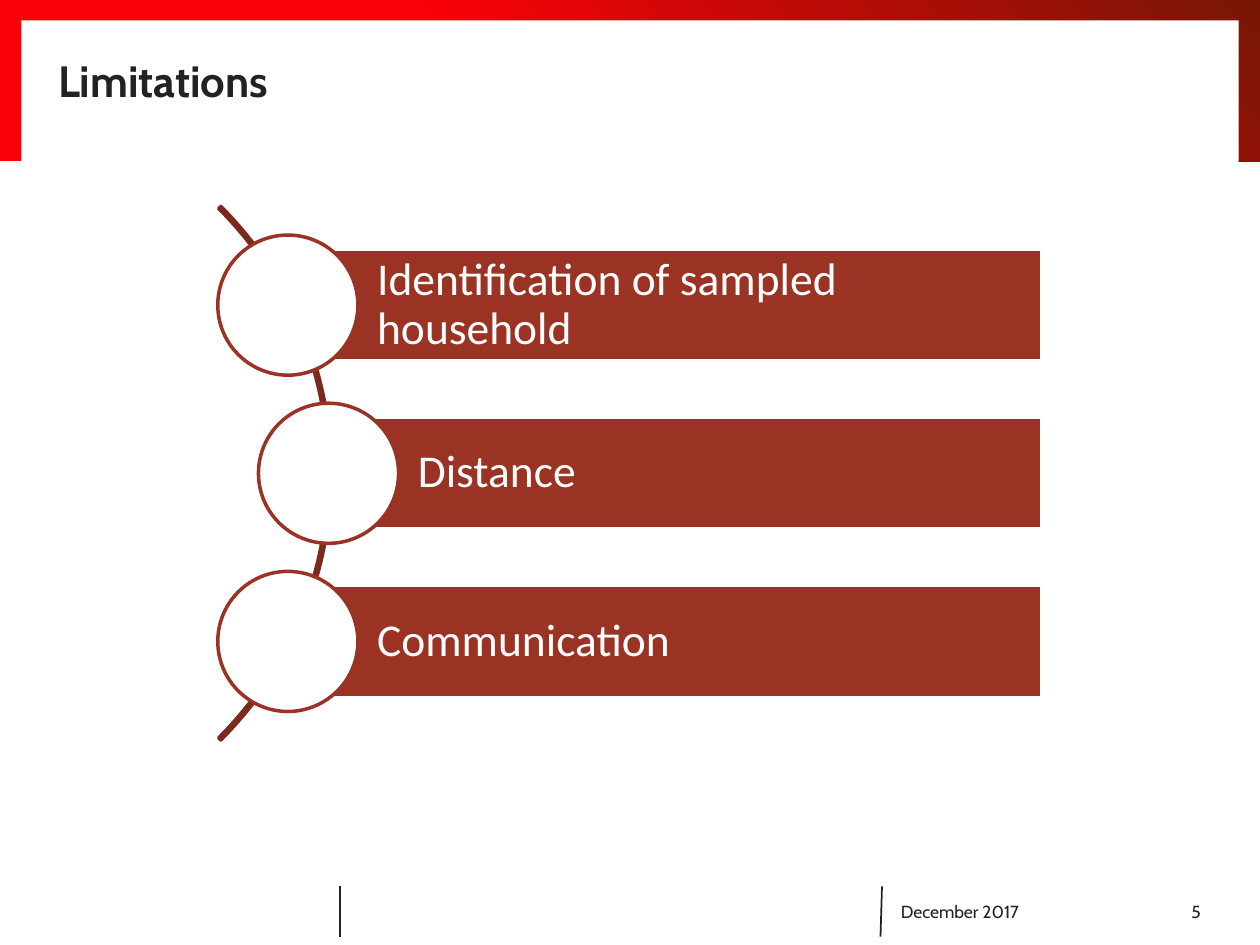
from dataclasses import dataclass
from typing import NamedTuple

from lxml.etree import SubElement
from pptx import Presentation
from pptx.dml.color import RGBColor
from pptx.enum.shapes import MSO_CONNECTOR, MSO_SHAPE
from pptx.enum.text import MSO_ANCHOR, MSO_AUTO_SIZE, PP_ALIGN
from pptx.oxml.ns import qn
from pptx.util import Cm, Pt


@dataclass(frozen=True)
class Theme:
    """Colours, fonts and type sizes of the slide."""
    ink: RGBColor = RGBColor.from_string("222221")
    white: RGBColor = RGBColor.from_string("FFFFFF")
    bright_red: RGBColor = RGBColor.from_string("FA0007")
    dark_red: RGBColor = RGBColor.from_string("761706")
    brick: RGBColor = RGBColor.from_string("9A3324")
    arc: RGBColor = RGBColor.from_string("7B291D")
    heading_font: str = "Cabin"
    item_font: str = "Calibri"
    title_size: Pt = Pt(25)
    item_size: Pt = Pt(26)
    footer_size: Pt = Pt(10)
    outline: Pt = Pt(2)
    divider: Pt = Pt(1)


class Box(NamedTuple):
    """A region of the slide in centimetres."""
    left: float
    top: float
    width: float
    height: float

    def lengths(self):
        """Return the four sides as slide lengths."""
        return [Cm(side) for side in self]


THEME = Theme()


def add_flat_shape(shapes, kind, box, fill=None, line=None):
    """Add a preset shape without shadow, with optional fill and outline."""
    shape = shapes.add_shape(kind, *box.lengths())
    shape.shadow.inherit = False
    if fill is None:
        shape.fill.background()
    else:
        shape.fill.solid()
        shape.fill.fore_color.rgb = fill
    if line is None:
        shape.line.fill.background()
    else:
        shape.line.color.rgb = line
        shape.line.width = THEME.outline
    return shape


def write(frame, text, font, size, color, align=PP_ALIGN.LEFT, bold=False):
    """Write one vertically centred, wrapping paragraph and return it."""
    frame.word_wrap = True
    frame.auto_size = MSO_AUTO_SIZE.NONE
    frame.vertical_anchor = MSO_ANCHOR.MIDDLE
    frame.text = text
    paragraph = frame.paragraphs[0]
    paragraph.alignment = align
    paragraph.font.name = font
    paragraph.font.size = size
    paragraph.font.bold = bold
    paragraph.font.color.rgb = color
    return paragraph


def set_margins(frame, left, other):
    """Set the left margin and the three other margins of a text frame."""
    frame.margin_left = Cm(left)
    frame.margin_top = frame.margin_right = frame.margin_bottom = Cm(other)


def add_header_frame(slide, box):
    """Draw the gradient band and the white panel that opens it downwards."""
    band = add_flat_shape(slide.shapes, MSO_SHAPE.RECTANGLE, box, THEME.bright_red)
    band.fill.gradient()
    band.fill.gradient_angle = 45
    stops = ((0.4, THEME.bright_red), (1, THEME.dark_red))
    for stop, (position, color) in zip(band.fill.gradient_stops, stops):
        stop.position = position
        stop.color.rgb = color
    border = 0.43
    panel = Box(box.left + border, box.top + 0.41, box.width - 2 * border, 3)
    add_flat_shape(slide.shapes, MSO_SHAPE.RECTANGLE, panel, THEME.white)


def add_title(slide, box, text):
    """Move the title placeholder in front of the header and fill it."""
    title = slide.shapes.title
    slide.shapes._spTree.append(title._element)
    title.left, title.top, title.width, title.height = box.lengths()
    set_margins(title.text_frame, 0, 0)
    write(title.text_frame, text, THEME.heading_font, THEME.title_size,
          THEME.ink, bold=True)


def add_footer(slide, box, date, number):
    """Place the two dividers, the date and the slide number."""
    for top_x, bottom_x in ((6.86, 6.86), (17.78, 17.75)):
        divider = slide.shapes.add_connector(
            MSO_CONNECTOR.STRAIGHT, Cm(box.left + top_x), Cm(box.top),
            Cm(box.left + bottom_x), Cm(box.top + box.height))
        divider.line.color.rgb = THEME.ink
        divider.line.width = THEME.divider
        SubElement(divider._element.spPr, qn("a:effectLst"))
    entries = ((17.91, 4.39, date, PP_ALIGN.LEFT),
               (22.3, 2.16, number, PP_ALIGN.RIGHT))
    for offset, width, text, align in entries:
        area = Box(box.left + offset, box.top, width, box.height)
        entry = slide.shapes.add_textbox(*area.lengths())
        write(entry.text_frame, text, THEME.heading_font, THEME.footer_size,
              THEME.ink, align)


def add_curved_list(slide, box, items):
    """Lay out bars with circles along an arc, at equal vertical pitch."""
    shapes = slide.shapes.add_group_shape().shapes
    pitch = box.height / (len(items) + 1)
    bar_height = pitch * 2 / 3
    circle = bar_height * 1.25
    arc_size = 15.21
    arc_box = Box(box.left + 2.29 - arc_size,
                  box.top + (box.height - arc_size) / 2, arc_size, arc_size)
    arc = add_flat_shape(shapes, MSO_SHAPE.BLOCK_ARC, arc_box, line=THEME.arc)
    for index, value in enumerate((189, 27, 0.004)):
        arc.adjustments[index] = value
    for row, (text, indent) in enumerate(items, start=1):
        left = box.left + indent
        middle = box.top + row * pitch
        bar_left = left + circle / 2
        bar_box = Box(bar_left, middle - bar_height / 2,
                      box.left + box.width - bar_left, bar_height)
        bar = add_flat_shape(shapes, MSO_SHAPE.RECTANGLE, bar_box,
                             THEME.brick, THEME.white)
        set_margins(bar.text_frame, 1.8, 0.18)
        paragraph = write(bar.text_frame, text, THEME.item_font,
                          THEME.item_size, THEME.white)
        paragraph.line_spacing = 0.9
        circle_box = Box(left, middle - circle / 2, circle, circle)
        add_flat_shape(shapes, MSO_SHAPE.OVAL, circle_box,
                       THEME.white, THEME.brick)


def main():
    """Build and save the slide."""
    presentation = Presentation()
    presentation.slide_width = Cm(25.4)
    presentation.slide_height = Cm(19.05)
    slide = presentation.slides.add_slide(presentation.slide_layouts[5])
    add_header_frame(slide, Box(0, 0, 25.4, 3.25))
    add_footer(slide, Box(0, 17.87, 25.4, 1.01), "December 2017", "5")
    add_title(slide, Box(1.17, 0.91, 23.01, 1.4), "Limitations")
    add_curved_list(slide, Box(4.39, 2.76, 16.62, 13.56), (
        ("Identification of sampled household", 0),
        ("Distance", 0.82),
        ("Communication", 0),
    ))
    presentation.save("out.pptx")


if __name__ == "__main__":
    main()
